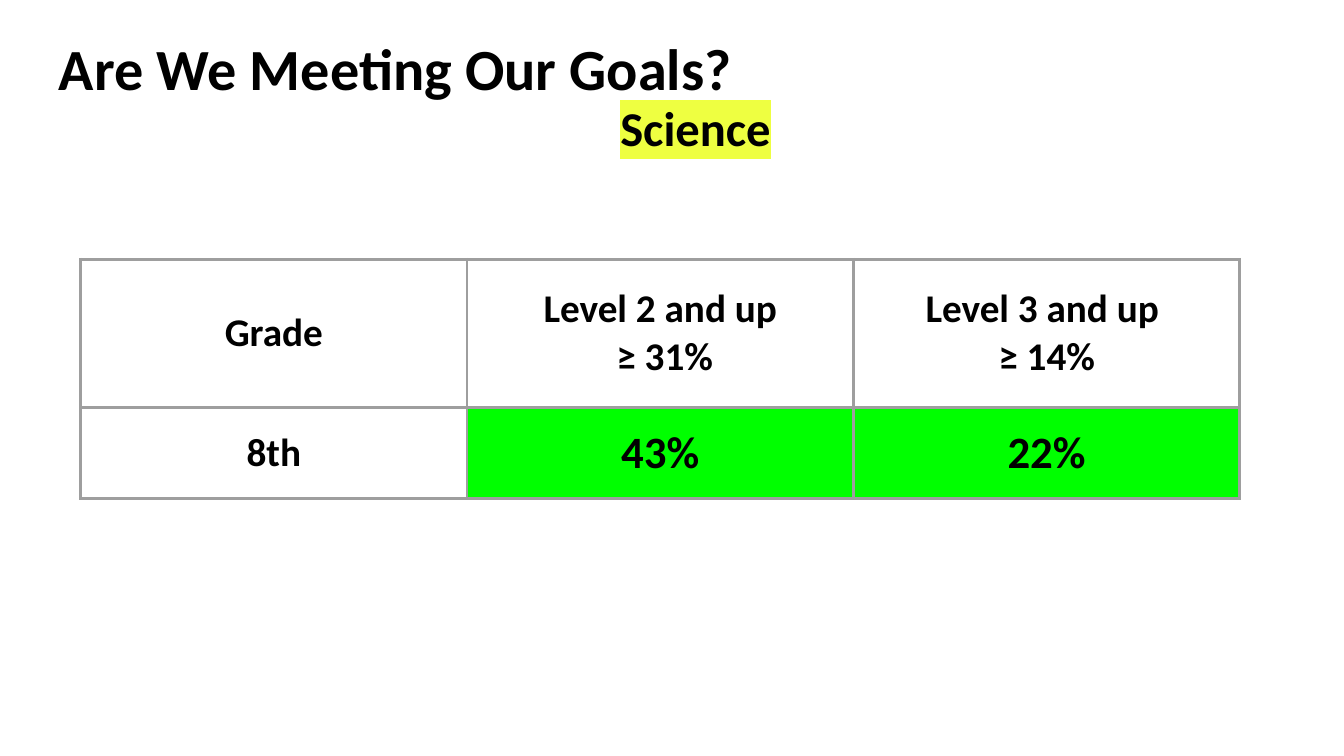
from lxml import etree
from pptx import Presentation, util as u
from pptx.dml.color import RGBColor
from pptx.enum import text
from pptx.oxml import ns

WIDE, HIGH = u.Inches(13.33), u.Inches(7.5)
BLACK = RGBColor(0x00, 0x00, 0x00)
GREEN = RGBColor(0x00, 0xFF, 0x00)
GREY = RGBColor(0x9E, 0x9E, 0x9E)
LIME = RGBColor(0xEE, 0xFF, 0x41)
PAD = u.Inches(0.13)
EDGE = u.Pt(2.25)
COLS = [0.2875] * 3
ROWS = [0.196, 0.12]
GOALS = [
    ["Grade", "Level 2 and up\n ≥ 31%", "Level 3 and up \n≥ 14%"],
    ["8th", "43%", "22%"],
]
SIDES = ("left", "top", "right", "bottom")
MID = text.PP_ALIGN.CENTER


def apply(item, style):
    for key, value in style.items():
        setattr(item, key, value)


def place(left, top, width, height):
    return [int(WIDE * left), int(HIGH * top),
            int(WIDE * width), int(HIGH * height)]


def child(parent, tag, **attrs):
    return etree.SubElement(parent, ns.qn(tag), attrs)


def write(frame, words, size, align=None):
    frame.text = words
    for para in frame.paragraphs:
        para.alignment = align
        for run in para.runs:
            apply(run.font, {"name": "Calibri", "size": u.Pt(size), "bold": True})
            run.font.color.rgb = BLACK


def label(slide, area, words, size, align=None):
    frame = slide.shapes.add_textbox(*place(*area)).text_frame
    apply(frame, {f"margin_{side}": PAD for side in SIDES})
    frame.word_wrap = True
    write(frame, words, size, align)
    return frame.paragraphs[0].runs[0]


def mark(run, color):
    light = etree.Element(ns.qn("a:highlight"))
    child(light, "a:srgbClr", val=str(color))
    run.font.fill._xPr.find(ns.qn("a:solidFill")).addnext(light)


def border(cell):
    props = cell._tc.get_or_add_tcPr()
    for side in "LRTB":
        line = child(props, f"a:ln{side}", w=str(EDGE))
        child(child(line, "a:solidFill"), "a:srgbClr", val=str(GREY))


def grid(slide, left, top):
    area = place(left, top, sum(COLS), sum(ROWS))
    table = slide.shapes.add_table(len(ROWS), len(COLS), *area).table
    apply(table, {"first_row": False, "horz_banding": False})
    for col, share in zip(table.columns, COLS):
        col.width = int(WIDE * share)
    for r, share in enumerate(ROWS):
        table.rows[r].height = int(HIGH * share)
        for c, words in enumerate(GOALS[r]):
            cell = table.cell(r, c)
            score = r > 0 and c > 0
            apply(cell, {f"margin_{side}": PAD for side in SIDES})
            cell.vertical_anchor = text.MSO_ANCHOR.MIDDLE
            border(cell)
            if score:
                cell.fill.solid()
                cell.fill.fore_color.rgb = GREEN
            else:
                cell.fill.background()
            write(cell.text_frame, words, 32 if score else 28, MID)


def main():
    deck = Presentation()
    apply(deck, {"slide_width": WIDE, "slide_height": HIGH})
    slide = deck.slides.add_slide(deck.slide_layouts[6])
    grid(slide, 0.06, 0.343)
    topic = label(slide, (0.3375, 0.112, 0.36, 0.113), "Science", 34.7, MID)
    mark(topic, LIME)
    label(slide, (0.034, 0.025, 0.932, 0.112), "Are We Meeting Our Goals?", 41.6)
    deck.save("out.pptx")


if __name__ == "__main__":
    main()
